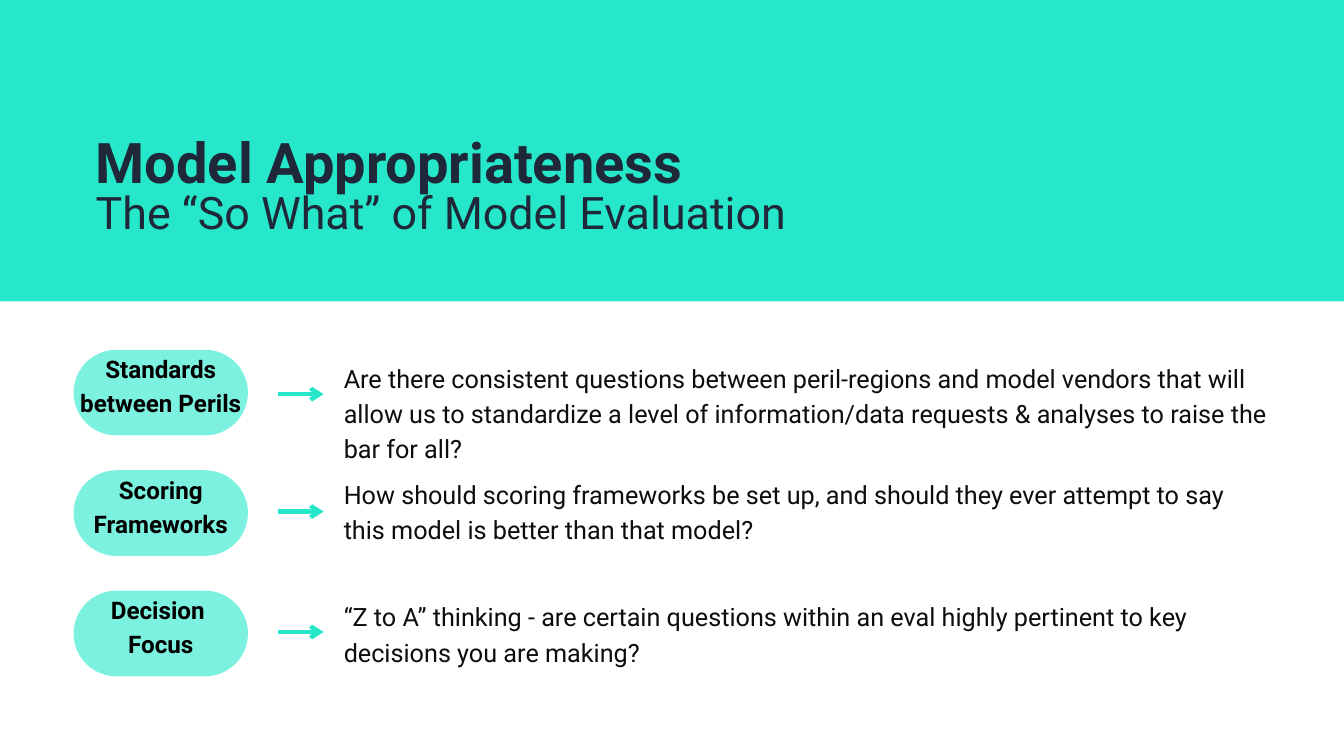
from pptx import Presentation, util as u
from pptx.dml.color import RGBColor
from pptx.enum import shapes, text
from pptx.oxml import ns, xmlchemy

WIDTH, HEIGHT = 13.33, 7.5
BANNER_HEIGHT = 2.99
ROW_LEFT, ROW_TOP, ROW_PITCH = 0.73, 3.47, 1.195
PILL_WIDTH, PILL_HEIGHT, LABEL_RISE = 1.73, 0.85, 0.18
ARROW_START, ARROW_END, QUESTION_START = 2.03, 2.48, 2.68
MINT, PALE_MINT = "26E7CA", "7DF1DF"

TITLE = {"size": u.Pt(40), "bold": True, "color": "1E2839", "leading": 39.6}
SUBTITLE = {**TITLE, "size": u.Pt(32), "bold": False, "leading": 31.7}
LABEL = {"size": u.Pt(17.3), "bold": True, "color": "000000", "leading": 24.3}
QUESTION = {"size": u.Pt(18), "bold": False, "color": "0D0D0D", "leading": 25.2}

TOPICS = [
    (["Standards between Perils"], 0.44, 0.08,
     "Are there consistent questions between peril-regions and model vendors that will "
     "allow us to standardize a level of information/data requests & analyses to raise the bar for all?"),
    (["Scoring Frameworks"], 0.41, 0.04,
     "How should scoring frameworks be set up, and should they ever attempt to say "
     "this model is better than that model?"),
    (["Decision ", "Focus"], 0.41, 0.06,
     "“Z to A” thinking - are certain questions within an eval highly pertinent to key "
     "decisions you are making?"),
]


def rgb(value):
    """Return the colour of a hex string."""
    return RGBColor.from_string(value)


def add_panel(slide, preset, box, fill):
    """Place a plain filled shape in the box."""
    panel = slide.shapes.add_shape(preset, *map(u.Inches, box))
    panel.shadow.inherit = False
    panel.fill.solid()
    panel.fill.fore_color.rgb = rgb(fill)
    panel.line.fill.background()
    return panel


def add_words(slide, box, lines, inset=0, anchor=text.MSO_ANCHOR.TOP, align=text.PP_ALIGN.LEFT):
    """Place (wording, style) lines as paragraphs in the box."""
    frame = slide.shapes.add_textbox(*map(u.Inches, box)).text_frame
    frame.word_wrap = True
    frame.vertical_anchor = anchor
    for side in ("left", "top", "right", "bottom"):
        setattr(frame, f"margin_{side}", u.Inches(inset))
    for index, (wording, style) in enumerate(lines):
        paragraph = frame.paragraphs[0] if index == 0 else frame.add_paragraph()
        paragraph.alignment = align
        paragraph.line_spacing = u.Pt(style["leading"])
        run = paragraph.add_run()
        run.text = wording
        for name, value in {"name": "Roboto", "size": style["size"], "bold": style["bold"]}.items():
            setattr(run.font, name, value)
        run.font.color.rgb = rgb(style["color"])


def add_arrow(slide, start, end, y):
    """Draw a level arrow between two horizontal positions."""
    arrow = slide.shapes.add_connector(
        shapes.MSO_CONNECTOR.STRAIGHT, *map(u.Inches, (start, y, end, y)))
    arrow.line.color.rgb = rgb(MINT)
    arrow.line.width = u.Pt(3)
    head = xmlchemy.OxmlElement("a:tailEnd")
    head.set("type", "arrow")
    arrow.line._get_or_add_ln().append(head)
    arrow._element.find(ns.qn("p:spPr")).append(xmlchemy.OxmlElement("a:effectLst"))


def add_banner(slide, left, top, width, height):
    """Fill the banner and set its two-line heading."""
    add_panel(slide, shapes.MSO_SHAPE.RECTANGLE, (left, top, width, height), MINT)
    add_words(slide, (left + 0.95, top + 1.38, 6.96, 1.02), [
        ("Model Appropriateness", TITLE),
        ("The “So What” of Model Evaluation", SUBTITLE),
    ])


def add_topic(slide, left, top, label, arrow_drop, question_drop, question):
    """Lay out one topic row: pill, arrow and question."""
    pill = add_panel(slide, shapes.MSO_SHAPE.ROUNDED_RECTANGLE,
                     (left, top, PILL_WIDTH, PILL_HEIGHT), PALE_MINT)
    pill.adjustments[0] = 0.5
    add_words(slide, (left, top - LABEL_RISE, PILL_WIDTH, PILL_HEIGHT + LABEL_RISE),
              [(line, LABEL) for line in label], 0.04,
              text.MSO_ANCHOR.MIDDLE, text.PP_ALIGN.CENTER)
    add_arrow(slide, left + ARROW_START, left + ARROW_END, top + arrow_drop)
    add_words(slide, (left + QUESTION_START, top + question_drop, 9.17, 0.68),
              [(question, QUESTION)])


def main():
    """Build and save the slide."""
    deck = Presentation()
    deck.slide_width, deck.slide_height = u.Inches(WIDTH), u.Inches(HEIGHT)
    slide = deck.slides.add_slide(deck.slide_layouts[6])
    add_banner(slide, 0, 0, WIDTH, BANNER_HEIGHT)
    for row, topic in enumerate(TOPICS):
        add_topic(slide, ROW_LEFT, ROW_TOP + row * ROW_PITCH, *topic)
    deck.save("out.pptx")


if __name__ == "__main__":
    main()
